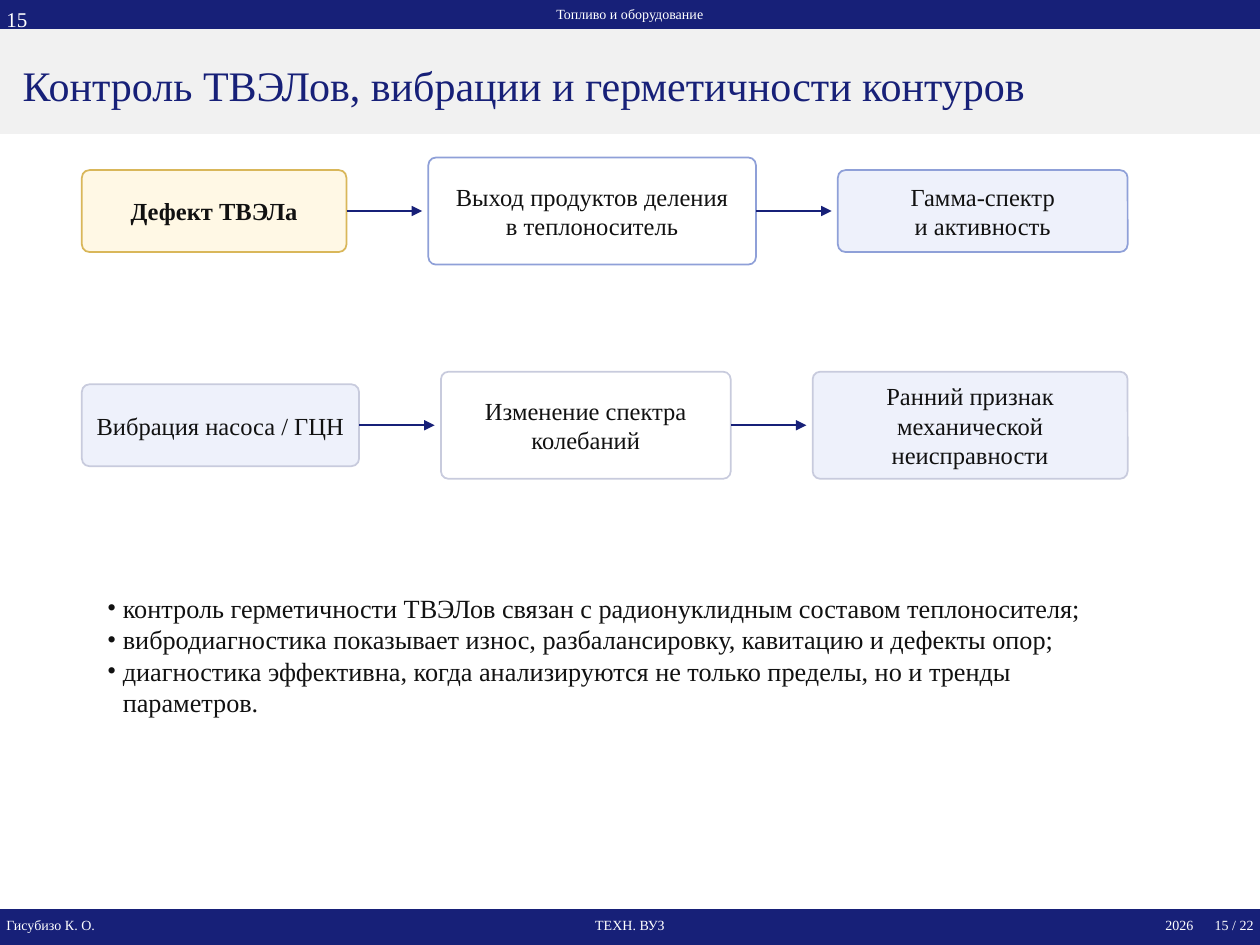
from dataclasses import dataclass

from lxml import etree
from pptx import Presentation
from pptx.dml.color import RGBColor
from pptx.enum.shapes import MSO_CONNECTOR, MSO_SHAPE
from pptx.enum.text import MSO_ANCHOR, PP_ALIGN
from pptx.oxml.ns import qn
from pptx.util import Pt

LEFT, CENTER, RIGHT = PP_ALIGN.LEFT, PP_ALIGN.CENTER, PP_ALIGN.RIGHT
TOP, MIDDLE = MSO_ANCHOR.TOP, MSO_ANCHOR.MIDDLE
RECTANGLE, ROUNDED = MSO_SHAPE.RECTANGLE, MSO_SHAPE.ROUNDED_RECTANGLE
STRAIGHT = MSO_CONNECTOR.STRAIGHT

FONT = "Times New Roman"
NAVY, GREY, WHITE, INK = "172078", "F1F1F1", "FFFFFF", "111111"
CREAM, GOLD, PALE, BLUE, LILAC = "FFF8E5", "D9B75A", "EEF1FB", "8FA0D8", "C8CBDD"

PAGE_WIDTH, PAGE_HEIGHT = 720, 540
FLOW_LEFT = 46.8
STEP_GAP, ARROW_LENGTH = 46.8, 43.2
LOW, TALL = 46.8, 61.2
CORNER_RADIUS = 4.32
BULLET_INDENT = 9


@dataclass(frozen=True)
class Step:
    lines: tuple[str, ...]
    width: float
    height: float
    fill: str
    outline: str
    bold: bool = False


@dataclass(frozen=True)
class Flow:
    middle: float
    steps: tuple[Step, ...]


@dataclass(frozen=True)
class Label:
    text: str
    left: float
    top: float
    width: float
    align: PP_ALIGN


FLOWS = (
    Flow(120.6, (
        Step(("Дефект ТВЭЛа",), 151.2, LOW, CREAM, GOLD, bold=True),
        Step(("Выход продуктов деления", "в теплоноситель"), 187.2, TALL, WHITE, BLUE),
        Step(("Гамма-спектр", "и активность"), 165.6, LOW, PALE, BLUE),
    )),
    Flow(243, (
        Step(("Вибрация насоса / ГЦН",), 158.4, LOW, PALE, LILAC),
        Step(("Изменение спектра", "колебаний"), 165.6, TALL, WHITE, LILAC),
        Step(("Ранний признак", "механической неисправности"), 180, TALL, PALE, LILAC),
    )),
)

BANDS = ((0, 17.28, NAVY), (17.28, 59.04, GREY), (519.84, 20.16, NAVY))

FOOTER_TOP = 523.44
LABELS = (
    Label("Топливо и оборудование", 14.4, 2.88, 691.2, CENTER),
    Label("Гисубизо К. О.", 3.6, FOOTER_TOP, 172.8, LEFT),
    Label("ТЕХН. ВУЗ", 277.2, FOOTER_TOP, 165.6, CENTER),
    Label("2026", 632, FOOTER_TOP, 50, RIGHT),
    Label("15 / 22", 686.4, FOOTER_TOP, 30, RIGHT),
)

CONCLUSIONS = (
    "контроль герметичности ТВЭЛов связан с радионуклидным составом теплоносителя;",
    "вибродиагностика показывает износ, разбалансировку, кавитацию и дефекты опор;",
    "диагностика эффективна, когда анализируются не только пределы, но и тренды параметров.",
)


def color(value: str) -> RGBColor:
    return RGBColor.from_string(value)


def write(shape, lines, size: float, ink: str, align=LEFT, anchor=MIDDLE,
          margin: float = 0, bold: bool = False, wrap: bool = True) -> None:
    frame = shape.text_frame
    frame.word_wrap = wrap
    frame.vertical_anchor = anchor
    frame.margin_left = frame.margin_right = Pt(margin)
    frame.margin_top = frame.margin_bottom = Pt(margin)
    for index, line in enumerate(lines):
        para = frame.add_paragraph() if index else frame.paragraphs[0]
        para.alignment = align
        span = para.add_run()
        span.text = line
        span.font.name = FONT
        span.font.size = Pt(size)
        span.font.bold = bold
        span.font.color.rgb = color(ink)


def add_box(page, kind, left: float, top: float, width: float, height: float,
            fill: str, outline: str):
    box = page.shapes.add_shape(kind, Pt(left), Pt(top), Pt(width), Pt(height))
    box.shadow.inherit = False
    box.fill.solid()
    box.fill.fore_color.rgb = color(fill)
    box.line.color.rgb = color(outline)
    box.line.width = Pt(1)
    return box


def add_text_box(page, left: float, top: float, width: float, height: float):
    return page.shapes.add_textbox(Pt(left), Pt(top), Pt(width), Pt(height))


def add_arrow(page, left: float, middle: float) -> None:
    arrow = page.shapes.add_connector(
        STRAIGHT, Pt(left), Pt(middle), Pt(left + ARROW_LENGTH), Pt(middle))
    arrow.line.color.rgb = color(NAVY)
    arrow.line.width = Pt(1.3)
    etree.SubElement(arrow.line._get_or_add_ln(), qn("a:tailEnd"), type="triangle")
    etree.SubElement(arrow.element.spPr, qn("a:effectLst"))


def add_flow(page, flow: Flow) -> None:
    left = FLOW_LEFT
    for index, step in enumerate(flow.steps):
        if index:
            add_arrow(page, left, flow.middle)
            left += STEP_GAP
        box = add_box(page, ROUNDED, left, flow.middle - step.height / 2,
                      step.width, step.height, step.fill, step.outline)
        box.adjustments[0] = CORNER_RADIUS / step.height
        write(box, step.lines, 14, INK, CENTER, margin=4.5, bold=step.bold)
        left += step.width


def add_bullets(shape) -> None:
    for para in shape.text_frame.paragraphs:
        properties = para._p.get_or_add_pPr()
        properties.set("marL", str(Pt(BULLET_INDENT)))
        properties.set("indent", str(-Pt(BULLET_INDENT)))
        etree.SubElement(properties, qn("a:buFont"), typeface=FONT)
        etree.SubElement(properties, qn("a:buChar"), char="•")


def place_title(page) -> None:
    title = page.shapes.title
    title.left, title.top, title.width, title.height = (
        Pt(12.96), Pt(25.92), Pt(691.2), Pt(44.64))
    write(title, ("Контроль ТВЭЛов, вибрации и герметичности контуров",), 24, NAVY)
    # The title has to lie in front of its grey band.
    title.element.getparent().append(title.element)


def main() -> None:
    deck = Presentation()
    deck.slide_width, deck.slide_height = Pt(PAGE_WIDTH), Pt(PAGE_HEIGHT)
    page = deck.slides.add_slide(deck.slide_layouts.get_by_name("Title Only"))

    for top, height, fill in BANDS:
        add_box(page, RECTANGLE, 0, top, PAGE_WIDTH, height, fill, fill)
    place_title(page)
    for label in LABELS:
        box = add_text_box(page, label.left, label.top, label.width, 10.08)
        write(box, (label.text,), 8, WHITE, label.align)

    for flow in FLOWS:
        add_flow(page, flow)

    conclusions = add_text_box(page, 61.2, 338.4, 597.6, 100.8)
    write(conclusions, CONCLUSIONS, 15, INK, anchor=TOP)
    add_bullets(conclusions)

    page_number = add_text_box(page, 0, 0, 20.16, 21.6)
    write(page_number, ("15",), 12, WHITE, anchor=TOP, margin=3.6, wrap=False)

    deck.save("out.pptx")


if __name__ == "__main__":
    main()
